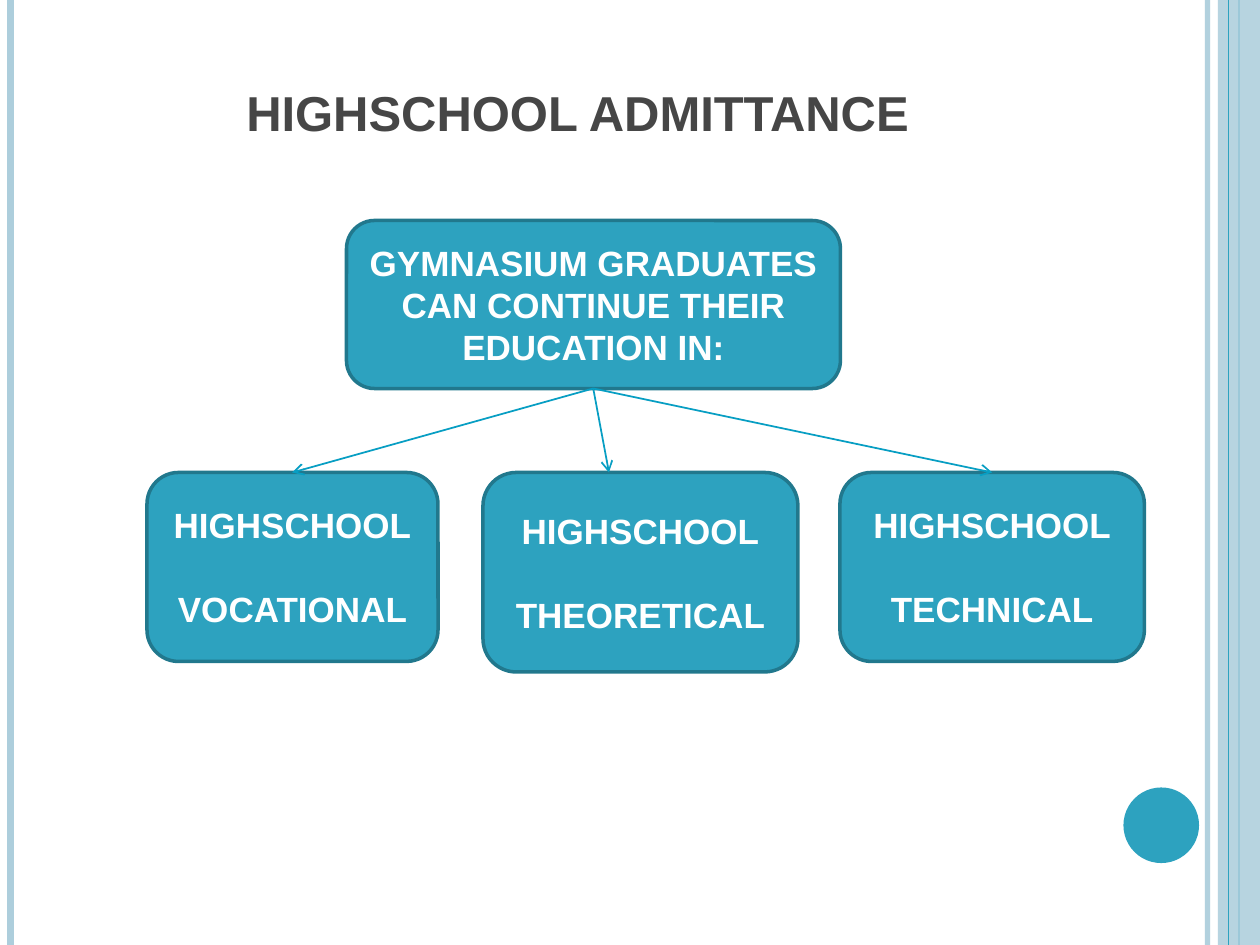
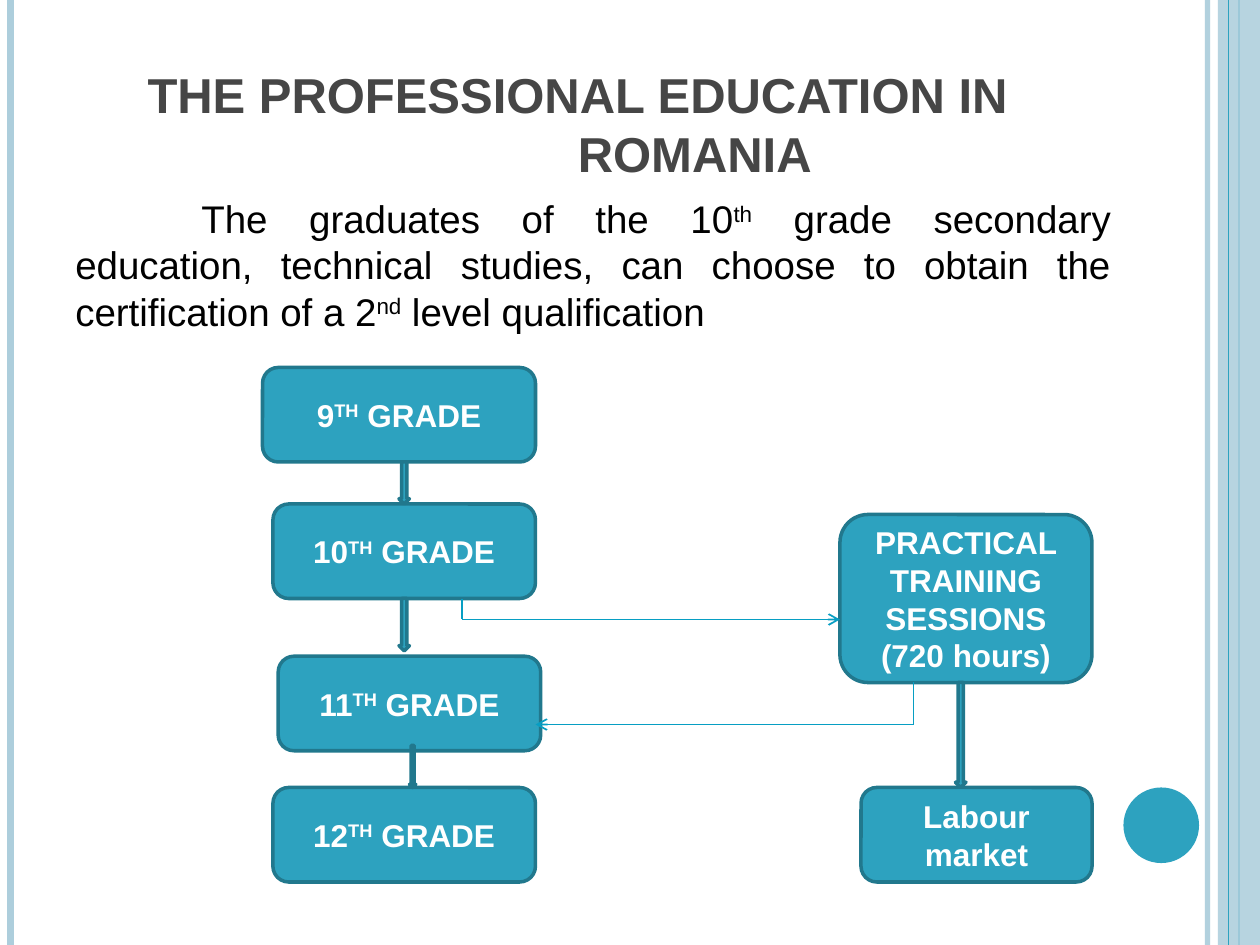
from lxml import etree
from pptx import Presentation
from pptx.dml.color import RGBColor
from pptx.enum import shapes as sh, text as tx
from pptx.oxml import ns
from pptx.util import Pt

PALE = RGBColor(0xAD, 0xCE, 0xDC)
TEAL = RGBColor(0x2D, 0xA2, 0xBF)
EDGE = RGBColor(0x21, 0x78, 0x8D)
LINK = RGBColor(0x07, 0x9E, 0xC3)
GREY = RGBColor(0x46, 0x46, 0x46)
BLACK = RGBColor(0, 0, 0)
WHITE = RGBColor(0xFF, 0xFF, 0xFF)
FONT = "Arial"
WIDE, HIGH = 720, 540
FORM = sh.MSO_SHAPE
ALIGN = tx.PP_ALIGN


def fade(part, share):
    """Give the colour of a fill or line an opacity in percent."""
    for tint in part.iter(ns.qn("a:srgbClr")):
        etree.SubElement(tint, ns.qn("a:alpha"), val=str(share * 1000))


def draw(slide, kind, box, fill=TEAL, edge=None):
    """Add a preset shape with a flat fill and an optional edge."""
    item = slide.shapes.add_shape(kind, *map(Pt, box))
    item.shadow.inherit = False
    item.fill.solid()
    item.fill.fore_color.rgb = fill
    if edge is None:
        item.line.fill.background()
    else:
        item.line.color.rgb = edge
        item.line.width = Pt(2)
    return item


def rule(slide, start, end, color=LINK, width=1, arrow=False):
    """Add a straight line, with an open arrowhead if wanted."""
    line = slide.shapes.add_connector(
        sh.MSO_CONNECTOR.STRAIGHT, *map(Pt, (*start, *end)))
    line.line.color.rgb = color
    line.line.width = Pt(width)
    props = line._element.spPr
    if arrow:
        etree.SubElement(props.find(ns.qn("a:ln")), ns.qn("a:tailEnd"), type="arrow")
    etree.SubElement(props, ns.qn("a:effectLst"))
    return line


def write(para, words, size, color, bold=True, align=ALIGN.CENTER):
    """Fill a paragraph; parts between carets are raised."""
    para.alignment = align
    font = para.font
    font.name, font.size, font.bold = FONT, Pt(size), bold
    font.color.rgb = color
    for spot, part in enumerate(words.split("^")):
        run = para.add_run()
        run.text = part
        if spot % 2:
            run._r.get_or_add_rPr().set("baseline", "30000")


def indent(para, left, first):
    """Set the left margin and first-line indent of a paragraph."""
    props = para._p.get_or_add_pPr()
    props.set("marL", str(Pt(left)))
    props.set("indent", str(Pt(first)))


def card(slide, box, lines, size):
    """Add a rounded box with spaced lines of bold white text."""
    frame = draw(slide, FORM.ROUNDED_RECTANGLE, box, edge=EDGE).text_frame
    frame.word_wrap = True
    frame.vertical_anchor = tx.MSO_ANCHOR.MIDDLE
    for spot, words in enumerate(lines):
        para = frame.add_paragraph() if spot else frame.paragraphs[0]
        write(para, words, size, WHITE)
        if spot:
            para.space_before = Pt(24)


def frieze(slide):
    """Draw the side bands and the disc that all slides share."""
    def pole(x, color, width):
        return rule(slide, (x, 0), (x, HIGH), color, width)

    fade(pole(690, PALE, 3)._element, 93)
    pole(6, PALE, 4.5)
    pole(708, TEAL, 1.5)
    fade(draw(slide, FORM.RECTANGLE, (696, 0, 24, HIGH), PALE)._element, 87)
    pole(702, TEAL, 0.75)
    draw(slide, FORM.OVAL, (642, 450, 43.2, 43.2))


def start(deck, words, height):
    """Add a slide with its bands and its title."""
    slide = deck.slides.add_slide(deck.slide_layouts[5])
    frieze(slide)
    title = slide.shapes.title
    title.left, title.top, title.width, title.height = map(
        Pt, (36, 21.6, 588, height))
    frame = title.text_frame
    frame.word_wrap = True
    frame.auto_size = tx.MSO_AUTO_SIZE.NONE
    frame.vertical_anchor = tx.MSO_ANCHOR.BOTTOM
    write(frame.paragraphs[0], words, 28, GREY)
    return slide


def tree(slide, box):
    """Draw the graduates box and its three branches."""
    left, top, width, _ = box
    hub = left + 255, top + 96
    card(slide, (left + 114, top, 282.24, 96),
         ["GYMNASIUM GRADUATES CAN CONTINUE THEIR EDUCATION IN:"], 20)
    kinds = (("VOCATIONAL", 0, 166.3, 108, 83),
             ("THEORETICAL", 192, 180, 114, 72),
             ("TECHNICAL", width - 174, 174, 108, 87))
    for kind, x, wide, high, tip in kinds:
        card(slide, (left + x, top + 144, wide, high), ["HIGHSCHOOL", kind], 20)
        rule(slide, hub, (left + x + tip, top + 144), arrow=True)


def intro(slide, box):
    """Write the justified opening paragraph."""
    frame = slide.shapes.add_textbox(*map(Pt, box)).text_frame
    frame.word_wrap = True
    para = frame.paragraphs[0]
    write(para, "The graduates of the 10^th^ grade secondary education, technical "
          "studies, can choose to obtain the certification of a 2^nd^ level "
          "qualification", 22, BLACK, False, ALIGN.JUSTIFY)
    indent(para, 0, 72)


def flow(slide, box):
    """Draw the grades, the training sessions and their arrows."""
    left, top, width, height = box
    grades = ((9, 0, 0, 156), (10, 6, 78, 150), (11, 9, 165, 150),
              (12, 6, height - 54, 150))
    for grade, x, y, wide in grades:
        card(slide, (left + x, top + y, wide, 54), [f"{grade}^TH^ GRADE"], 18)
    card(slide, (left + width - 132, top + height - 54, 132, 54),
         ["Labour market"], 18)
    card(slide, (left + width - 144, top + 84, 144, 96),
         ["PRACTICAL TRAINING SESSIONS (720 hours)"], 18)
    for x, y, wide, high in ((78, 54, 6, 24), (78, 132, 6, 30),
                             (84, 216, 3.6, 24), (396, 180, 6, 60)):
        draw(slide, FORM.DOWN_ARROW, (left + x, top + y, wide, high), edge=EDGE)
    for x, y, turn, end in ((114, 132, 144, 330), (372, 180, 204, 156)):
        bend = left + x, top + turn
        rule(slide, (left + x, top + y), bend)
        rule(slide, bend, (left + end, top + turn), arrow=True)


def main():
    """Build both slides and save the deck."""
    deck = Presentation()
    deck.slide_width, deck.slide_height = Pt(WIDE), Pt(HIGH)
    tree(start(deck, "HIGHSCHOOL ADMITTANCE", 62.64), (84, 126, 570, 258))
    slide = start(deck, "THE PROFESSIONAL EDUCATION IN ROMANIA", 86.4)
    indent(slide.shapes.title.text_frame.paragraphs[0], 134, -134)
    intro(slide, (36, 108, 606, 90))
    flow(slide, (150, 210, 474, 294))
    deck.save("out.pptx")


if __name__ == "__main__":
    main()
